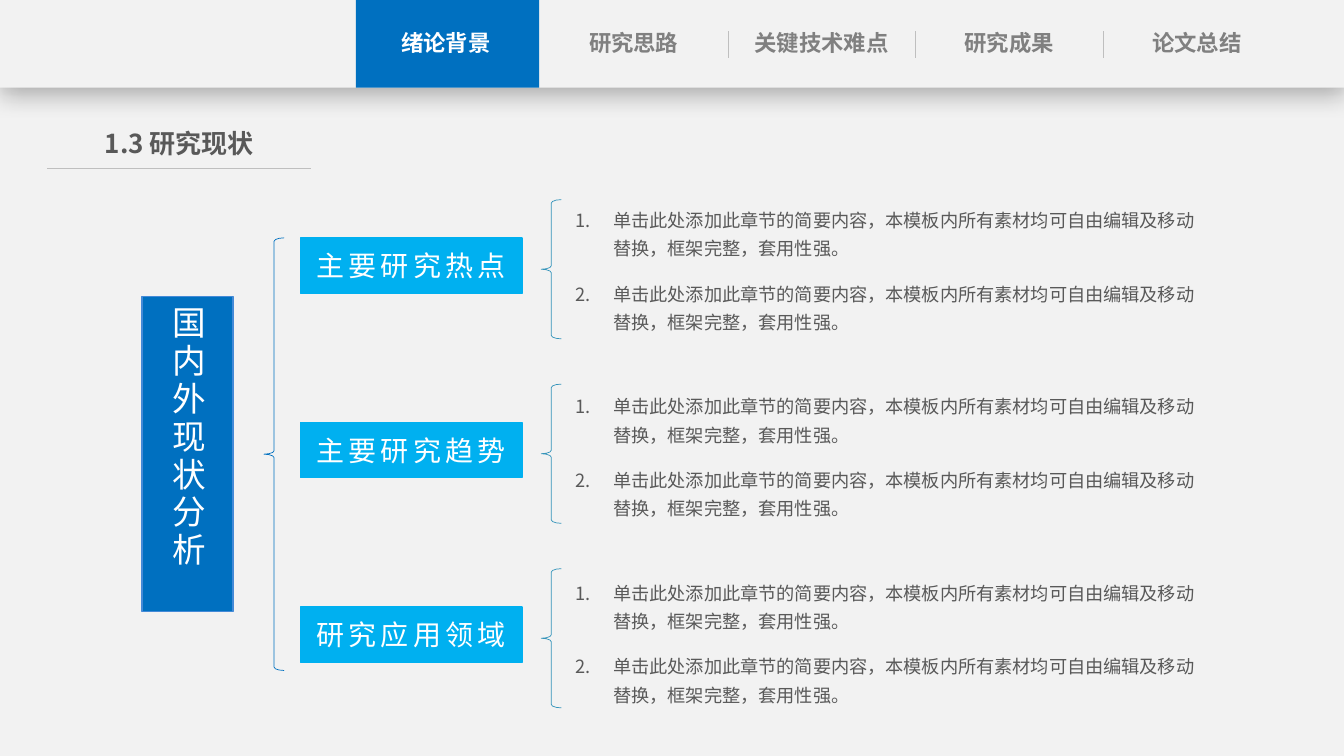
from lxml.etree import SubElement
from pptx import Presentation
from pptx.dml.color import RGBColor
from pptx.enum.shapes import MSO_CONNECTOR, MSO_SHAPE
from pptx.enum.text import MSO_ANCHOR, MSO_AUTO_SIZE, PP_ALIGN
from pptx.oxml.ns import qn
from pptx.util import Pt

FONT = "Noto Sans CJK SC"
BLUE, SKY, PALE, GREY, RULE = "0070C0", "00B0F0", "F2F2F2", "595959", "BFBFBF"
WIDTH, HEIGHT, HEADER_HEIGHT = 960, 540, 62.6
TABS = ["绪论背景", "研究思路", "关键技术难点", "研究成果", "论文总结"]
BRANCHES = ["主要研究热点", "主要研究趋势", "研究应用领域"]
SUMMARY = "单击此处添加此章节的简要内容，本模板内所有素材均可自由编辑及移动替换，框架完整，套用性强。"


def color(value):
    return RGBColor.from_string(value)


def place(shape, left, top, width, height):
    shape.left, shape.top = Pt(left), Pt(top)
    shape.width, shape.height = Pt(width), Pt(height)


def style(paragraph, size, ink, bold=False, align=PP_ALIGN.CENTER, tracking=0):
    """Format a whole paragraph, with tracking in points."""
    paragraph.alignment = align
    font = paragraph.font
    font.size, font.bold, font.name = Pt(size), bold, FONT
    font.color.rgb = color(ink)
    properties = paragraph._p.pPr.find(qn("a:defRPr"))
    properties.set("spc", str(tracking * 100))
    SubElement(properties, qn("a:ea"), typeface=FONT)


def frame_text(shape, text, anchor=MSO_ANCHOR.TOP, side_margin=7.2):
    """Fill a text frame and return its first paragraph."""
    frame = shape.text_frame
    frame.word_wrap, frame.auto_size = True, MSO_AUTO_SIZE.NONE
    frame.vertical_anchor = anchor
    frame.margin_left = frame.margin_right = Pt(side_margin)
    frame.margin_top = frame.margin_bottom = Pt(3.6)
    frame.text = text
    return frame.paragraphs[0]


def add_block(slide, kind, box, fill=None, line=None, weight=1):
    shape = slide.shapes.add_shape(kind, *map(Pt, box))
    shape.shadow.inherit = False
    if fill:
        shape.fill.solid()
        shape.fill.fore_color.rgb = color(fill)
    else:
        shape.fill.background()
    if line:
        shape.line.color.rgb = color(line)
        shape.line.width = Pt(weight)
    else:
        shape.line.fill.background()
    return shape


def add_brace(slide, box, line):
    brace = add_block(slide, MSO_SHAPE.LEFT_BRACE, box, line=line, weight=0.5)
    brace.adjustments[0] = 0.171


def add_rule(slide, start, end):
    rule = slide.shapes.add_connector(MSO_CONNECTOR.STRAIGHT, *map(Pt, start + end))
    rule.line.color.rgb = color(RULE)
    rule.line.width = Pt(0.5)
    SubElement(rule._element.spPr, qn("a:effectLst"))


def add_header(slide, width, height):
    bar = add_block(slide, MSO_SHAPE.RECTANGLE, (0, 0, width, height), PALE)
    effects = bar._element.spPr.find(qn("a:effectLst"))
    shadow = SubElement(effects, qn("a:outerShdw"), blurRad=str(Pt(18)),
                        dist=str(Pt(4)), dir="5400000", algn="t", rotWithShape="0")
    black = SubElement(shadow, qn("a:srgbClr"), val="000000")
    SubElement(black, qn("a:alpha"), val="29000")

    first, step, tab_width = 265.7, 134.1, 105.8
    add_block(slide, MSO_SHAPE.RECTANGLE, (first - 11.5, 0, 131, height), BLUE)
    for index, name in enumerate(TABS):
        left = first + index * step
        tab = slide.shapes.add_textbox(Pt(left), Pt(17.3), Pt(tab_width), Pt(27.4))
        style(frame_text(tab, name, side_margin=0), 16,
              "808080" if index else "FFFFFF", bold=True)
        if index > 1:
            add_rule(slide, (left - 13.8, 22.3), (left - 13.8, 41.8))


def fill_heading(slide, left, top, width):
    """Put the section title above a rule of the given width."""
    title = slide.shapes.title
    place(title, left + 30.2, top, 128.2, 30.2)
    style(frame_text(title, "1.3 研究现状", side_margin=0), 18.6, GREY, bold=True)
    add_rule(slide, (left, top + 33.1), (left + width, top + 33.1))


def fill_list(placeholder, box, items):
    place(placeholder, *box)
    frame_text(placeholder, "\n".join(items))
    for paragraph in placeholder.text_frame.paragraphs:
        paragraph.line_spacing = 1.3
        paragraph.space_before = paragraph.space_after = Pt(6)
        properties = paragraph._p.get_or_add_pPr()
        properties.set("marL", str(Pt(27)))
        properties.set("indent", str(-Pt(27)))
        SubElement(properties, qn("a:buFont"), typeface=FONT)
        SubElement(properties, qn("a:buAutoNum"), type="arabicPeriod")
        style(paragraph, 13, GREY, align=PP_ALIGN.LEFT)


def add_tree(slide, left, top):
    """Draw the root, its brace and one branch with a list per topic."""
    root = add_block(slide, MSO_SHAPE.RECTANGLE, (left, top + 69.1, 65, 225),
                     BLUE, "448AD7")
    caption = frame_text(root, "国内外现状分析", MSO_ANCHOR.MIDDLE)
    root.text_frame._txBody.bodyPr.set("vert", "eaVert")
    style(caption, 24, "FFFFFF", align=PP_ALIGN.LEFT, tracking=3)
    add_brace(slide, (left + 87.1, top + 27.3, 14.4, 309), BLUE)

    for index, name in enumerate(BRANCHES):
        row = top + index * 131.8
        topic = add_block(slide, MSO_SHAPE.RECTANGLE,
                          (left + 113, row + 27.3, 158.4, 39.6), SKY, SKY)
        style(frame_text(topic, name, MSO_ANCHOR.MIDDLE), 20, "FFFFFF", tracking=3)
        add_brace(slide, (left + 285.1, row, 14.4, 99.4), "3494BA")
        list_top = top - 1.5 + index * 133.2
        fill_list(slide.placeholders[index + 1],
                  (left + 302.4, list_top, 456.5, 100.8), [SUMMARY] * 2)


def main():
    presentation = Presentation()
    presentation.slide_width, presentation.slide_height = Pt(WIDTH), Pt(HEIGHT)
    comparison_layout = presentation.slide_layouts[4]
    slide = presentation.slides.add_slide(comparison_layout)
    slide.background.fill.solid()
    slide.background.fill.fore_color.rgb = color(PALE)
    spare = slide.placeholders[4]._element
    spare.getparent().remove(spare)

    add_header(slide, WIDTH, HEADER_HEIGHT)
    fill_heading(slide, 33.8, 87.1, 188.7)
    add_tree(slide, 101.5, 142.6)
    presentation.save("out.pptx")


if __name__ == "__main__":
    main()
